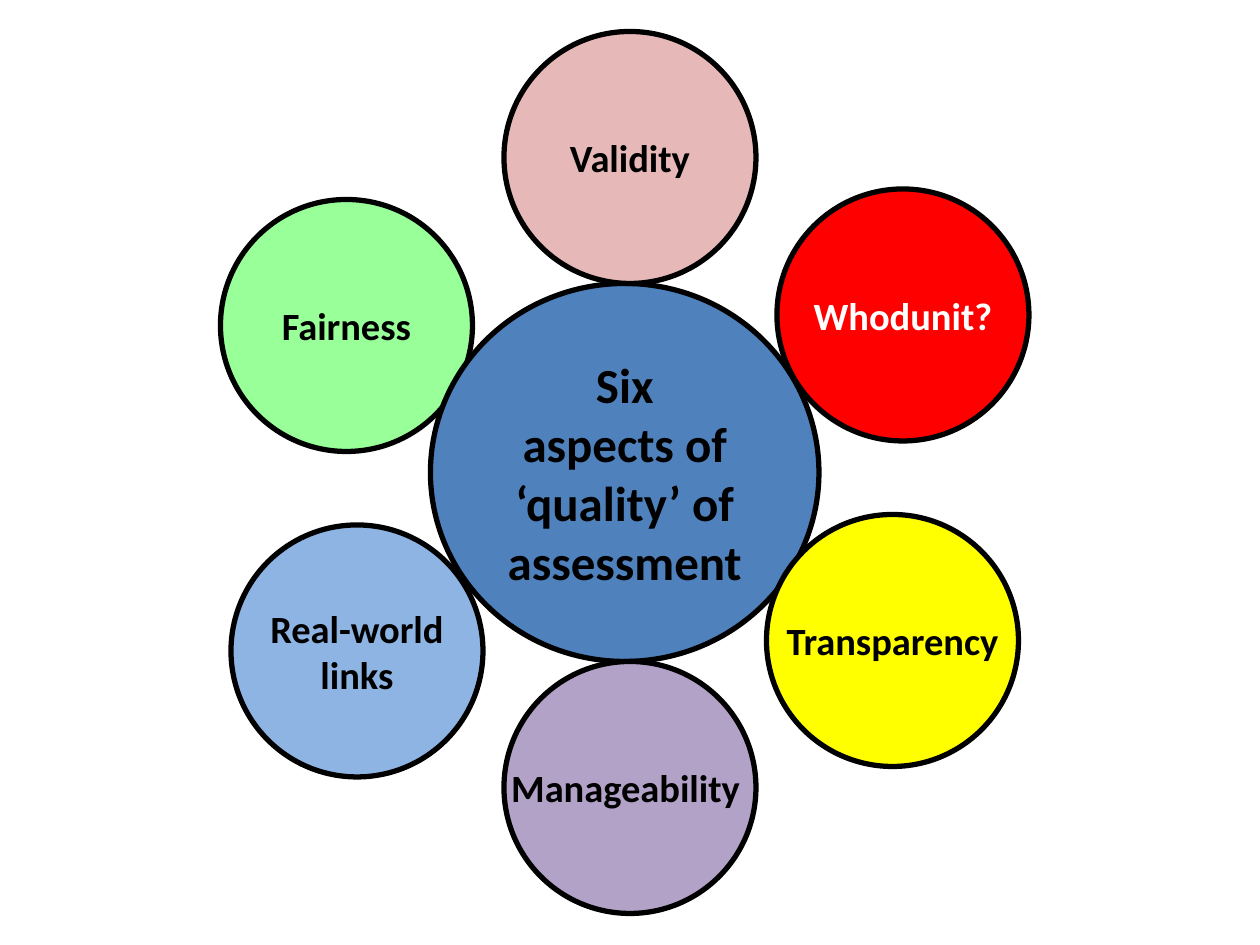
from pptx import Presentation
from pptx.util import Pt
from pptx.dml.color import RGBColor
from pptx.enum.shapes import MSO_SHAPE
from pptx.enum.text import PP_ALIGN, MSO_ANCHOR


def paint(color, value):
    color.rgb = RGBColor.from_string(value)


deck = Presentation()
deck.slide_width, deck.slide_height = Pt(720), Pt(540)
slide = deck.slides.add_slide(deck.slide_layouts[6])

SIZE = 144  # diameter of the outer circles
HUB = (222, 216)  # width and height of the central ellipse
BLACK, WHITE = "000000", "FFFFFF"

# Circles from back to front: left, top, fill, text colour, lines
items = [
    (126, 114, "99FF99", BLACK, ["Fairness"]),
    (246, 162, "4F81BD", BLACK, ["Six", "aspects of ‘quality’ of assessment"]),
    (444, 108, "FF0000", WHITE, ["Whodunit?"]),
    (288, 18, "E6B9B8", BLACK, ["Validity"]),
    (132, 300, "8EB4E3", BLACK, ["Real-world", "links"]),
    (438, 294, "FFFF00", BLACK, ["Transparency"]),
    (288, 378, "B3A2C7", BLACK, ["Manageability "]),
]

for left, top, fill, ink, lines in items:
    hub = lines[0] == "Six"
    wide, high = HUB if hub else (SIZE, SIZE)
    disc = slide.shapes.add_shape(
        MSO_SHAPE.OVAL, Pt(left), Pt(top), Pt(wide), Pt(high))
    disc.shadow.inherit = False
    disc.fill.solid()
    paint(disc.fill.fore_color, fill)
    paint(disc.line.color, BLACK)
    disc.line.width = Pt(3)

    # Label
    frame = disc.text_frame
    frame.word_wrap = hub
    frame.vertical_anchor = MSO_ANCHOR.MIDDLE
    frame.margin_left = frame.margin_right = Pt(0)
    frame.margin_top = frame.margin_bottom = Pt(0)
    for i, line in enumerate(lines):
        para = frame.add_paragraph() if i else frame.paragraphs[0]
        para.alignment = PP_ALIGN.CENTER
        run = para.add_run()
        run.text = line
        run.font.name = "Calibri"
        run.font.size = Pt(28 if hub else 22)
        run.font.bold = True
        paint(run.font.color, ink)

deck.save("out.pptx")
